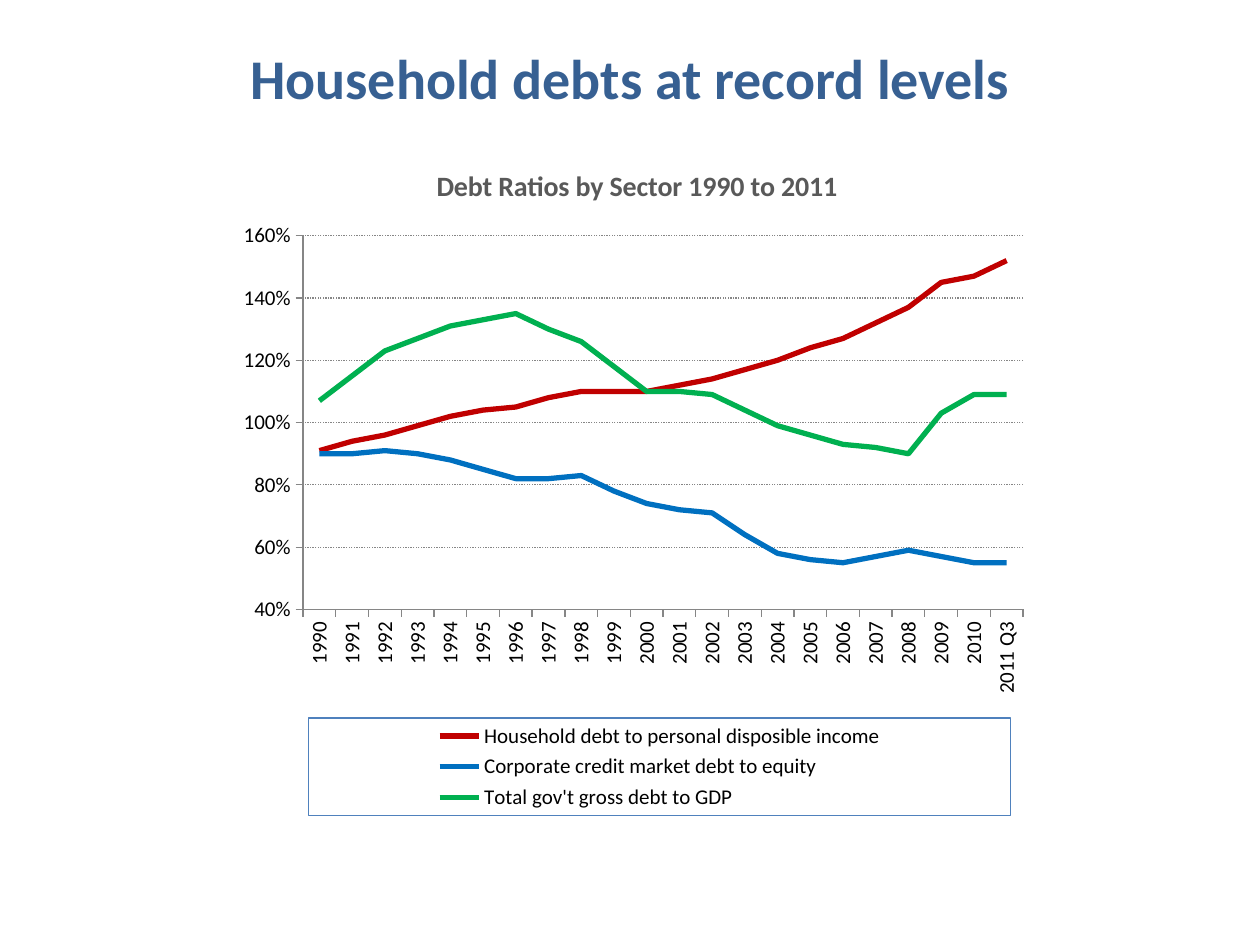
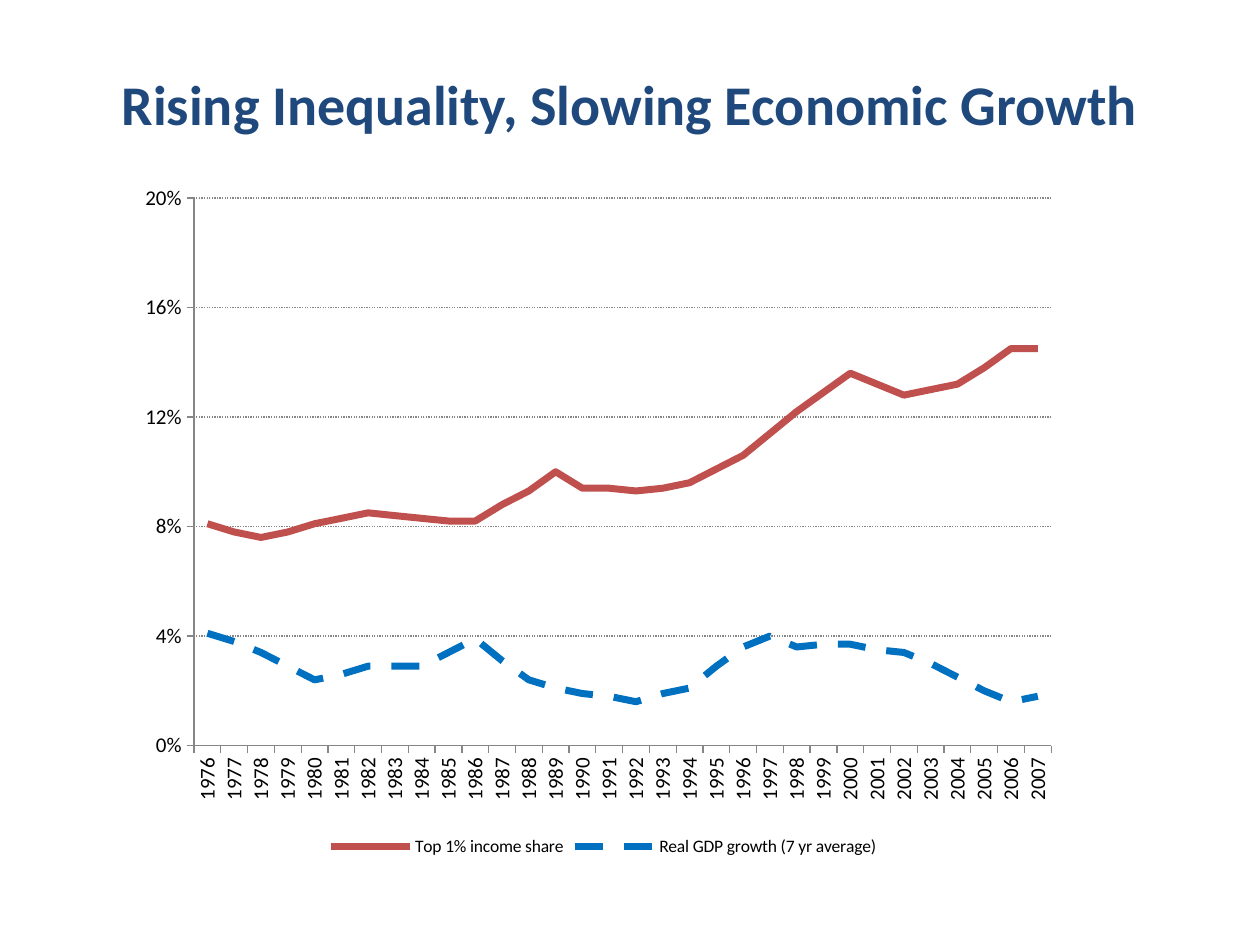
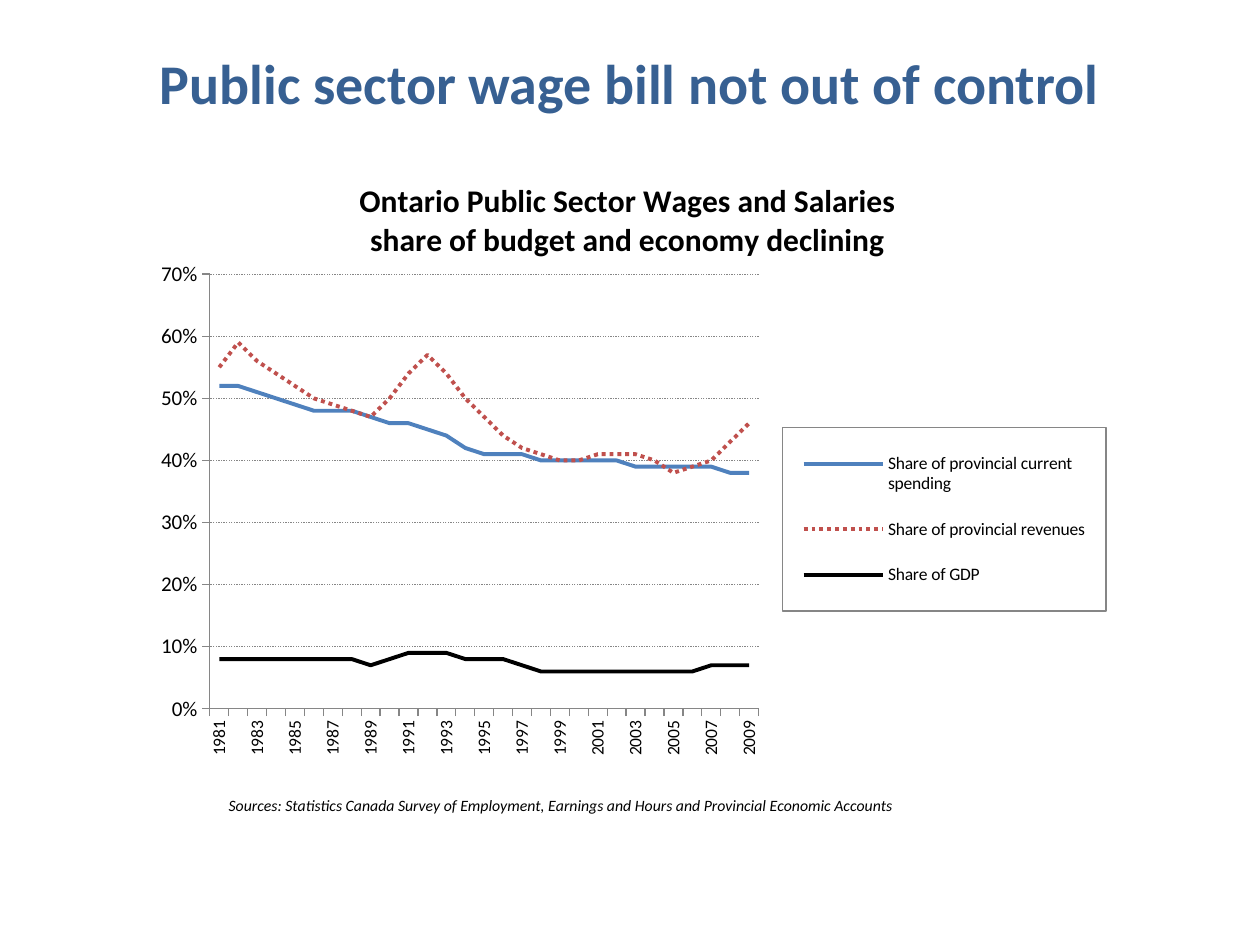
"""Builds three slides of line charts, filling the years between the listed percentages."""
import pptx
import pptx.chart.data
import pptx.dml.color
import pptx.enum.chart
import pptx.enum.dml
import pptx.enum.text
import pptx.oxml
import pptx.oxml.ns
import pptx.util

Inches, Pt = pptx.util.Inches, pptx.util.Pt
qn = pptx.oxml.ns.qn
DASH = pptx.enum.dml.MSO_LINE
LEGEND = pptx.enum.chart.XL_LEGEND_POSITION
FONT = "Calibri"
NS = ('xmlns:c="http://schemas.openxmlformats.org/drawingml/2006/chart" '
      'xmlns:a="http://schemas.openxmlformats.org/drawingml/2006/main"')
COLORS = {
    "title": "376092", "navy": "1F497D", "gray": "595959", "axis": "868686",
    "black": "000000", "crimson": "C00000", "azure": "0070C0",
    "green": "00B050", "blue": "4F81BD", "red": "C0504D",
}


def style(font, size, color="black", bold=False, italic=False):
    font.name, font.size, font.bold, font.italic = FONT, Pt(size), bold, italic
    font.color.rgb = pptx.dml.color.RGBColor.from_string(COLORS[color])


def place(element, *box):
    for old in element.findall(qn("c:layout")):
        element.remove(old)
    inner = '<c:layoutTarget val="inner"/>' if element.tag == qn("c:plotArea") else ""
    modes = '<c:xMode val="edge"/><c:yMode val="edge"/>'
    sizes = "".join(f'<c:{k} val="{v}"/>' for k, v in zip("xywh", box))
    layout = pptx.oxml.parse_xml(f"<c:layout {NS}><c:manualLayout>{inner}{modes}{sizes}"
                                 "</c:manualLayout></c:layout>")
    overlay = element.find(qn("c:overlay"))
    if overlay is None:
        element.insert(0, layout)
    else:
        overlay.addprevious(layout)


slides = [
    {
        "title": "Household debts at record levels", "color": "title", "height": 0.62,
        "at": (1.25, 1, 7.5, 5.62), "plot": (0.154, 0.155, 0.762, 0.528),
        "heading": ("Debt Ratios by Sector 1990 to 2011", 16, "gray", 0.29, 0.05),
        "scale": (0.4, 1.6, 0.2), "cat_size": 12, "label_step": 1, "digits": 0,
        "legend": (LEGEND.BOTTOM, 12, "blue", (0.16, 0.836, 0.743, 0.138)),
        "cats": [str(y) for y in range(1990, 2011)] + ["2011 Q3"],
        "width": 3,
        "series": [
            ("Household debt to personal disposible income", "crimson", DASH.SOLID,
             (91, 96, 102, 105, 110, 110, 114, 120, 127, 137, 147, 152), {"2009": 145}),
            ("Corporate credit market debt to equity", "azure", DASH.SOLID,
             (90, 91, 88, 82, 83, 74, 71, 58, 55, 59, 55, 55), {}),
            ("Total gov't gross debt to GDP", "green", DASH.SOLID,
             (107, 123, 131, 135, 126, 110, 109, 99, 93, 90, 109, 109), {"2009": 103}),
        ],
    },
    {
        "title": "Rising Inequality, Slowing Economic Growth", "color": "navy", "height": 1.03,
        "at": (1.08, 1.42, 7.42, 5.42), "plot": (0.062, 0.028, 0.917, 0.802),
        "scale": (0, 0.2, 0.04), "cat_size": 12, "label_step": 1, "digits": 1,
        "legend": (LEGEND.BOTTOM, 10, None, None),
        "cats": [str(y) for y in range(1976, 2008)],
        "width": 4,
        "series": [
            ("Top 1% income share", "red", DASH.SOLID,
             (8.1, 7.6, 8.1, 8.5, 8.3, 8.2, 9.3, 9.4, 9.3, 9.6, 10.6, 12.2, 13.6, 12.8,
              13.2, 14.5, 14.5), {"1989": 10}),
            ("Real GDP growth (7 yr average)", "azure", DASH.DASH,
             (4.1, 3.4, 2.4, 2.9, 2.9, 3.9, 2.4, 1.9, 1.6, 2.1, 3.6, 3.6, 3.7, 3.4, 2.5,
              1.6, 1.8), {"1997": 4}),
        ],
    },
    {
        "title": "Public sector wage bill not out of control", "color": "title", "height": 0.7,
        "at": (1, 1.17, 7.92, 5.75), "plot": (0.084, 0.175, 0.55, 0.6),
        "heading": ("Ontario Public Sector Wages and Salaries\n"
                    "share of budget and economy declining", 18, "black", 0.23, 0.04),
        "source": "Sources: Statistics Canada Survey of Employment, Earnings and Hours "
                  "and Provincial Economic Accounts",
        "scale": (0, 0.7, 0.1), "cat_size": 10, "label_step": 2, "digits": 0,
        "legend": (LEGEND.RIGHT, 10, "axis", (0.658, 0.387, 0.324, 0.253)),
        "cats": [str(y) for y in range(1981, 2010)],
        "width": 2.25,
        "series": [
            ("Share of provincial current spending", "blue", DASH.SOLID,
             (52, 51, 49, 48, 47, 46, 44, 41, 41, 40, 40, 39, 39, 39, 38), {}),
            ("Share of provincial revenues", "red", DASH.ROUND_DOT,
             (55, 56, 52, 49, 47, 54, 54, 47, 42, 40, 41, 41, 38, 40, 46),
             {"1982": 59, "1992": 57}),
            ("Share of GDP", "black", DASH.SOLID,
             (8, 8, 8, 8, 7, 9, 9, 8, 7, 6, 6, 6, 6, 7, 7), {}),
        ],
    },
]

prs = pptx.Presentation()
prs.slide_width, prs.slide_height = Inches(10), Inches(7.5)

for d in slides:
    s = prs.slides.add_slide(prs.slide_layouts[5])
    sp = s.shapes.title
    sp.left, sp.top, sp.width = Inches(0.5), Inches(0.3), Inches(9)
    sp.height = Inches(d["height"])
    tf = sp.text_frame
    tf.text = d["title"]
    tf.auto_size = pptx.enum.text.MSO_AUTO_SIZE.NONE
    tf.vertical_anchor = pptx.enum.text.MSO_ANCHOR.MIDDLE
    tf.paragraphs[0].alignment = pptx.enum.text.PP_ALIGN.CENTER
    style(tf.paragraphs[0].runs[0].font, 32, d["color"], bold=True)

    cats, digits = d["cats"], d["digits"]
    last = len(cats) - 1
    data = pptx.chart.data.CategoryChartData(number_format="0%")
    data.categories = cats
    for name, color, dash, every_second, peaks in d["series"]:
        known = {min(2 * i, last): v for i, v in enumerate(every_second)}
        known.update({cats.index(year): v for year, v in peaks.items()})
        percents = [known[i] if i in known else round((known[i - 1] + known[i + 1]) / 2, digits)
                    for i in range(last + 1)]
        data.add_series(name, [round(v / 100, digits + 2) for v in percents])
    chart = s.shapes.add_chart(pptx.enum.chart.XL_CHART_TYPE.LINE,
                               *[Inches(v) for v in d["at"]], data).chart
    style(chart.font, 10)
    chart.plots[0].vary_by_categories = False
    place(chart._chartSpace.chart.plotArea, *d["plot"])

    for ser, (name, color, dash, *rest) in zip(chart.plots[0].series, d["series"]):
        ser.smooth = False
        ser.marker.style = pptx.enum.chart.XL_MARKER_STYLE.NONE
        line = ser.format.line
        line.color.rgb = pptx.dml.color.RGBColor.from_string(COLORS[color])
        line.width, line.dash_style = Pt(d["width"]), dash

    cat, val = chart.category_axis, chart.value_axis
    val.minimum_scale, val.maximum_scale, val.major_unit = d["scale"]
    val.has_major_gridlines = True
    val.tick_labels.number_format = "0%"
    val.tick_labels.number_format_is_linked = False
    val.major_gridlines.format.line.dash_style = DASH.ROUND_DOT
    for line in (cat.format.line, val.format.line, val.major_gridlines.format.line):
        line.color.rgb = pptx.dml.color.RGBColor.from_string(COLORS["axis"])
        line.width = Pt(0.75)
    for axis, size in ((cat, d["cat_size"]), (val, 12)):
        axis.major_tick_mark = pptx.enum.chart.XL_TICK_MARK.OUTSIDE
        style(axis.tick_labels.font, size)
    body = cat._element.find(qn("c:txPr")).find(qn("a:bodyPr"))
    body.set("rot", "-5400000")
    body.set("vert", "horz")
    skip = pptx.oxml.parse_xml(f'<c:tickLblSkip {NS} val="{d["label_step"]}"/>')
    cat._element.find(qn("c:noMultiLvlLbl")).addprevious(skip)

    chart.has_title = "heading" in d
    if chart.has_title:
        text, size, color, x, y = d["heading"]
        chart.chart_title.text_frame.text = text
        for p in chart.chart_title.text_frame.paragraphs:
            style(p.runs[0].font, size, color, bold=True)
        place(chart.chart_title._element, x, y)
    if "source" in d:
        tf = cat.axis_title.text_frame
        tf.text = d["source"]
        style(tf.paragraphs[0].runs[0].font, 9, italic=True)
        place(cat.axis_title._element, 0.1, 0.89)

    position, size, border, box = d["legend"]
    chart.has_legend = True
    chart.legend.position = position
    chart.legend.include_in_layout = False
    style(chart.legend.font, size)
    if box:
        place(chart.legend._element, *box)
        frame = pptx.oxml.parse_xml(
            f'<c:spPr {NS}><a:ln w="9525"><a:solidFill><a:srgbClr val="{COLORS[border]}"/>'
            '</a:solidFill></a:ln></c:spPr>')
        chart.legend._element.find(qn("c:txPr")).addprevious(frame)

prs.save("out.pptx")
